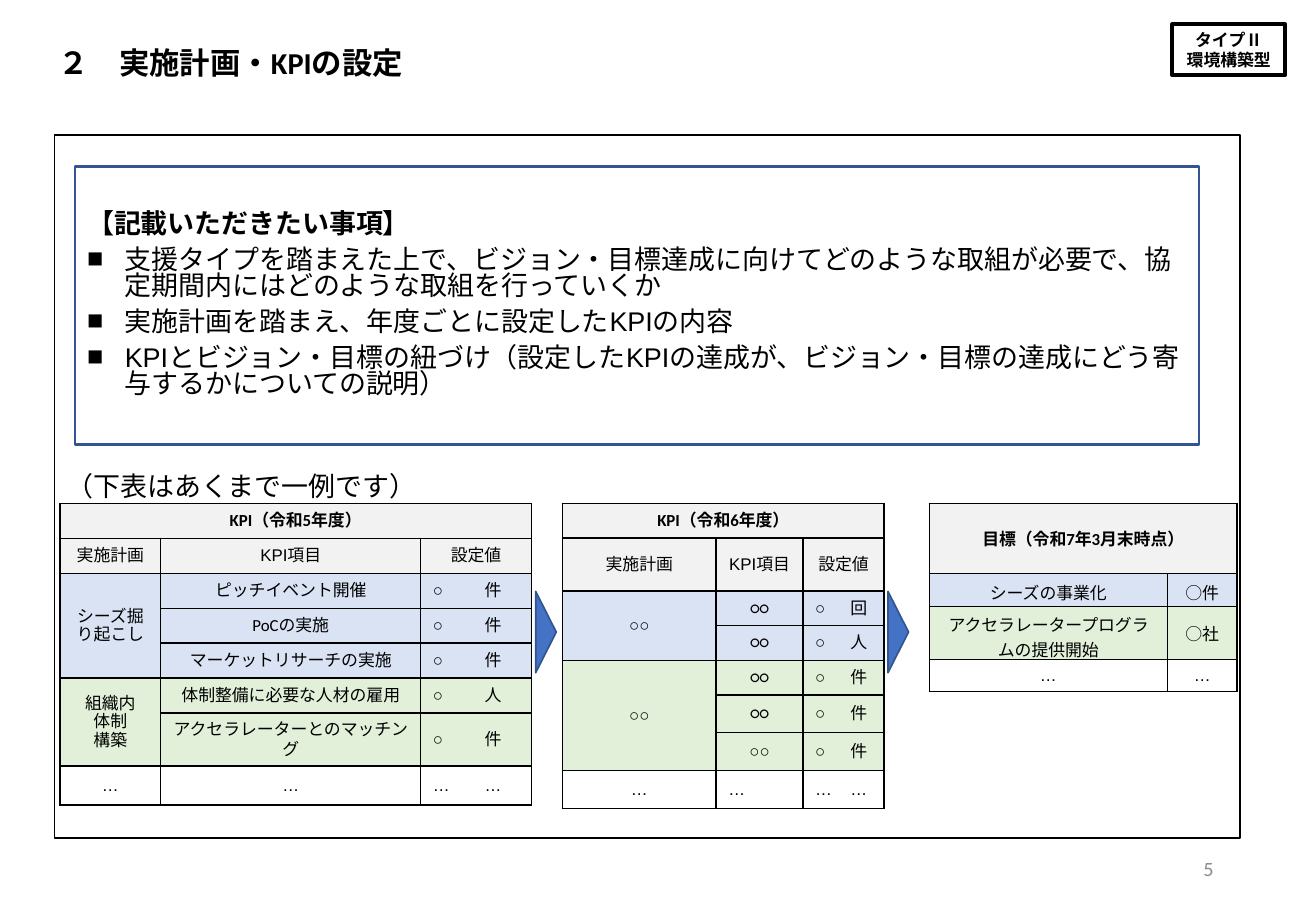
"""Build the implementation plan and KPI slide."""
from dataclasses import dataclass
from typing import Optional

import lxml.etree
import pptx
import pptx.dml.color
import pptx.enum.lang
import pptx.enum.shapes
import pptx.enum.text
import pptx.oxml
import pptx.oxml.ns
import pptx.util

Pt = pptx.util.Pt
qn = pptx.oxml.ns.qn
ALIGN = pptx.enum.text.PP_ALIGN
ANCHOR = pptx.enum.text.MSO_ANCHOR
SHAPE = pptx.enum.shapes.MSO_SHAPE
CJK = "Noto Sans CJK JP"
COLORS = {
    "black": "000000", "white": "FFFFFF", "gray": "F2F2F2", "number": "8C8C8C",
    "blue": "DAE3F3", "green": "E2F0D9", "arrow": "4472C4", "navy": "325491",
}


@dataclass
class Box:
    left: float
    top: float
    width: float
    height: float
    lines: tuple[str, ...] = ()
    size: float = 10
    font: str = "Arial"
    color: str = "black"
    bold: bool = False
    align: ALIGN = ALIGN.LEFT
    anchor: ANCHOR = ANCHOR.MIDDLE
    inset: Optional[float] = None
    fill: Optional[str] = None
    line: Optional[str] = None
    weight: float = 1
    kind: SHAPE = SHAPE.RECTANGLE
    rotation: float = 0


@dataclass
class Row:
    height: float
    fill: str
    texts: tuple[str, ...]


@dataclass
class Grid:
    left: float
    widths: tuple[float, ...]
    rows: tuple[Row, ...]
    merges: tuple[tuple[int, int, int, int], ...]
    calibri_rows: range = range(0)
    east_asian: Optional[str] = None
    left_cell: Optional[tuple[int, int]] = None


TYPE_LABEL = Box(694.8, 14.4, 67, 30.2, ("タイプⅡ", "環境構築型"), bold=True,
                 align=ALIGN.CENTER, inset=2.9, line="black", weight=2.25)
TITLE = Box(31.7, 23, 291.6, 27.4, ("２\u3000実施計画・KPIの設定",), 18, "Calibri",
            bold=True, inset=2.9)
FRAME = Box(32.4, 79.9, 702.7, 416.9, fill="white", line="black")
ARROWS = [Box(left, 368.6, 48.2, 12.2, fill="arrow", line="navy",
              kind=SHAPE.ISOSCELES_TRIANGLE, rotation=90) for left in (299.5, 508.3)]
EXAMPLE = Box(32.4, 275, 270.7, 26.6, ("（下表はあくまで一例です）",), 16, CJK,
              anchor=ANCHOR.TOP)
NUMBER = Box(550.8, 500.4, 175.7, 28.8, ("5",), 12, "Calibri", "number", align=ALIGN.RIGHT)
REQUEST = Box(44.6, 98.6, 666, 164.9, (
    "【記載いただきたい事項】",
    "支援タイプを踏まえた上で、ビジョン・目標達成に向けてどのような取組が必要で、協定期間内にはどのような取組を行っていくか",
    "実施計画を踏まえ、年度ごとに設定したKPIの内容",
    "KPIとビジョン・目標の紐づけ（設定したKPIの達成が、ビジョン・目標の達成にどう寄与するかについての説明）",
), 16, fill="white", line="navy", weight=1.5)

GRIDS = (
    Grid(35.5, (59.8, 154.1, 20.2, 45.4), (
        Row(20.7, "gray", ("KPI（令和5年度）", "", "", "")),
        Row(20.7, "gray", ("実施計画", "KPI項目", "設定値", "")),
        Row(20.7, "blue", ("シーズ掘り起こし", "ピッチイベント開催", "○", "件")),
        Row(20.7, "blue", ("", "PoCの実施", "○", "件")),
        Row(20.7, "blue", ("", "マーケットリサーチの実施", "○", "件")),
        Row(20.7, "green", ("組織内\n体制\n構築", "体制整備に必要な人材の雇用", "○", "人")),
        Row(31.4, "green", ("", "アクセラレーターとのマッチング", "○", "件")),
        Row(23.1, "white", ("…",) * 4),
    ), ((0, 0, 0, 3), (1, 2, 1, 3), (2, 0, 4, 0), (5, 0, 6, 0)), range(2, 7)),
    Grid(333.3, (91.2, 51.4, 18, 30.2), (
        Row(20.5, "gray", ("KPI（令和6年度）", "", "", "")),
        Row(31.4, "gray", ("実施計画", "KPI項目", "設定値", "")),
        Row(20.5, "blue", ("○○", "○○", "○", "回")),
        Row(20.5, "blue", ("", "○○", "○", "人")),
        Row(20.5, "green", ("○○", "○○", "○", "件")),
        Row(22.5, "green", ("", "○○", "○", "件")),
        Row(22.5, "green", ("", "○○", "○", "件")),
        Row(22.5, "white", ("…",) * 4),
    ), ((0, 0, 0, 3), (1, 2, 1, 3), (2, 0, 3, 0), (4, 0, 6, 0)), range(2, 6),
        left_cell=(7, 1)),
    Grid(550.8, (141.1, 41.4), (
        Row(41.5, "gray", ("目標（令和7年3月末時点）", "")),
        Row(19.4, "blue", ("シーズの事業化", "○件")),
        Row(31.4, "green", ("アクセラレータープログラムの提供開始", "○社")),
        Row(19.2, "white", ("…", "…")),
    ), ((0, 0, 0, 1),), east_asian=CJK),
)


def rgb(name: str) -> pptx.dml.color.RGBColor:
    return pptx.dml.color.RGBColor.from_string(COLORS[name])


def format_paragraph(p, size: float, font: str, color: str, bold: bool, align: ALIGN,
                     east_asian: Optional[str] = None) -> None:
    p.alignment = align
    for r in p.runs:
        r.font.size, r.font.name, r.font.bold = Pt(size), font, bold
        r.font.color.rgb = rgb(color)
        r.font.language_id = pptx.enum.lang.MSO_LANGUAGE_ID.JAPANESE
        ea = lxml.etree.SubElement(r.font._element, qn("a:ea"))
        ea.set("typeface", east_asian or font)


def draw_box(s, box: Box):
    place = [Pt(v) for v in (box.left, box.top, box.width, box.height)]
    if box.line:
        sp = s.shapes.add_shape(box.kind, *place)
        sp.shadow.inherit = False
        sp.line.color.rgb, sp.line.width = rgb(box.line), Pt(box.weight)
        sp.rotation = box.rotation
    else:
        sp = s.shapes.add_textbox(*place)
    if box.fill:
        sp.fill.solid()
        sp.fill.fore_color.rgb = rgb(box.fill)
    else:
        sp.fill.background()
    if box.lines:
        tf = sp.text_frame
        tf.word_wrap, tf.vertical_anchor = True, box.anchor
        if box.inset is not None:
            tf.margin_left = tf.margin_right = tf.margin_top = tf.margin_bottom = Pt(box.inset)
        tf.text = "\n".join(box.lines)
        for p in tf.paragraphs:
            format_paragraph(p, box.size, box.font, box.color, box.bold, box.align)
    return sp


def draw_request(s, box: Box) -> None:
    heading, *items = draw_box(s, box).text_frame.paragraphs
    for p in (heading, *items):
        p.level, p.line_spacing, p.space_before = 1, 0.8, Pt(6)
        indent = 0 if p is heading else Pt(22.3)
        pPr = p._p.get_or_add_pPr()
        pPr.set("marL", str(indent))
        pPr.set("indent", str(-indent))
        if indent:
            lxml.etree.SubElement(pPr, qn("a:buFont")).set("typeface", "Arial")
            lxml.etree.SubElement(pPr, qn("a:buChar")).set("char", "■")
    heading.space_before = Pt(12)
    heading.runs[0].font.bold = True


def set_borders(cell, hidden: str) -> None:
    tcPr = cell._tc.get_or_add_tcPr()
    for i, side in enumerate(("L", "R", "T", "B")):
        ln = lxml.etree.Element(qn(f"a:ln{side}"), w=str(Pt(1)))
        if side == hidden:
            lxml.etree.SubElement(ln, qn("a:noFill"))
        else:
            fill = lxml.etree.SubElement(ln, qn("a:solidFill"))
            lxml.etree.SubElement(fill, qn("a:srgbClr")).set("val", COLORS["black"])
        tcPr.insert(i, ln)


def draw_grid(s, grid: Grid) -> None:
    height = sum(row.height for row in grid.rows)
    table = s.shapes.add_table(len(grid.rows), len(grid.widths), Pt(grid.left), Pt(298.5),
                               Pt(sum(grid.widths)), Pt(height)).table
    table.first_row = table.horz_banding = False
    for column, width in zip(table.columns, grid.widths):
        column.width = Pt(width)
    for i, row in enumerate(grid.rows):
        table.rows[i].height = Pt(row.height)
        for j, text in enumerate(row.texts):
            cell = table.cell(i, j)
            cell.vertical_anchor = ANCHOR.MIDDLE
            cell.fill.solid()
            cell.fill.fore_color.rgb = rgb(row.fill)
            split = len(grid.widths) == 4 and i > 1
            set_borders(cell, {2: "R", 3: "L"}.get(j, "") if split else "")
            cell.text_frame.text = text
            calibri = i == 0 or (j == 1 and i in grid.calibri_rows)
            align = ALIGN.LEFT if (i, j) == grid.left_cell else ALIGN.CENTER
            for p in cell.text_frame.paragraphs:
                format_paragraph(p, 10, "Calibri" if calibri else "Arial", "black", i == 0,
                                 align, grid.east_asian)
    for top, left, bottom, right in grid.merges:
        table.cell(top, left).merge(table.cell(bottom, right))


def main() -> None:
    prs = pptx.Presentation()
    prs.slide_width, prs.slide_height = Pt(780), Pt(540)
    s = prs.slides.add_slide(prs.slide_layouts[6])
    for box in (TYPE_LABEL, TITLE, FRAME):
        draw_box(s, box)
    for grid in GRIDS:
        draw_grid(s, grid)
    for box in (*ARROWS, EXAMPLE, NUMBER):
        draw_box(s, box)
    draw_request(s, REQUEST)
    prs.save("out.pptx")


if __name__ == "__main__":
    main()
